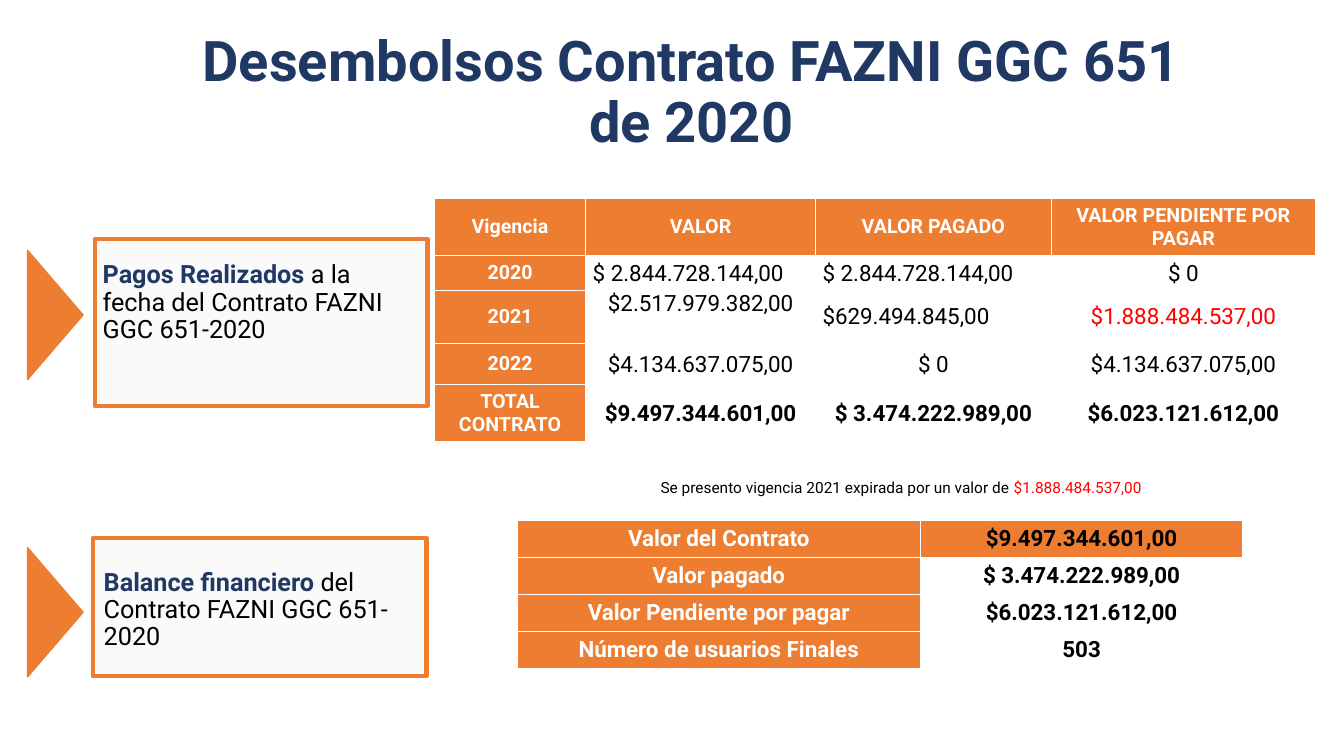
from lxml.etree import SubElement
from pptx import Presentation
from pptx.dml.color import RGBColor
from pptx.enum.shapes import MSO_SHAPE
from pptx.enum.text import MSO_ANCHOR, MSO_AUTO_SIZE, PP_ALIGN
from pptx.oxml import parse_xml
from pptx.oxml.ns import nsdecls, qn
from pptx.util import Inches, Pt

COLORS = {
    "navy": "203864",
    "orange": "ED7D31",
    "panel": "F2F2F2",
    "black": "000000",
    "white": "FFFFFF",
    "red": "FF0000",
}


def rgb(name):
    return RGBColor.from_string(COLORS[name])


class SlideBuilder:
    font_name = "Roboto"
    heading_margins = (0.1, 0.05, 0.1, 0.05)
    value_margins = (0.01, 0.01, 0.01, 0)

    def __init__(self, presentation):
        self.width = presentation.slide_width
        self.height = presentation.slide_height
        self.slide = presentation.slides.add_slide(presentation.slide_layouts[5])

    def across(self, percent):
        return round(self.width * percent / 100)

    def down(self, percent):
        return round(self.height * percent / 100)

    def area(self, left, top, width, height):
        return self.across(left), self.down(top), self.across(width), self.down(height)

    def style(self, font, size, color=None, bold=None):
        font.name = self.font_name
        font.size = Pt(size)
        if color:
            font.color.rgb = rgb(color)
        if bold is not None:
            font.bold = bold

    def set_margins(self, target, margins):
        sides = ("margin_left", "margin_top", "margin_right", "margin_bottom")
        for side, margin in zip(sides, margins):
            setattr(target, side, Inches(margin))

    def title(self, text, area):
        heading = self.slide.shapes.title
        heading.left, heading.top, heading.width, heading.height = self.area(*area)
        frame = heading.text_frame
        frame.text = text
        frame.word_wrap = True
        frame.auto_size = MSO_AUTO_SIZE.NONE
        frame.vertical_anchor = MSO_ANCHOR.BOTTOM
        paragraph = frame.paragraphs[0]
        paragraph.alignment = PP_ALIGN.CENTER
        paragraph.line_spacing = 0.9
        self.style(paragraph.font, 40, "navy", True)

    def shape(self, kind, area, fill, line_width, rotation=0, opacity=100):
        shape = self.slide.shapes.add_shape(kind, *self.area(*area))
        shape.shadow.inherit = False
        shape.rotation = rotation
        shape.fill.solid()
        shape.fill.fore_color.rgb = rgb(fill)
        shape.line.color.rgb = rgb("orange")
        shape.line.width = Pt(line_width)
        if opacity < 100:
            color = shape.fill._xPr.find(qn("a:solidFill"))[0]
            SubElement(color, qn("a:alpha")).set("val", str(opacity * 1000))

    def text(self, runs, area, size, margins, spacing=1.0, align=PP_ALIGN.LEFT):
        frame = self.slide.shapes.add_textbox(*self.area(*area)).text_frame
        frame.word_wrap = True
        self.set_margins(frame, margins)
        paragraph = frame.paragraphs[0]
        paragraph.alignment = align
        paragraph.line_spacing = spacing
        self.style(paragraph.font, size)
        for words, color, bold in runs:
            run = paragraph.add_run()
            run.text = words
            self.style(run.font, size, color, bold)

    def panel(self, lead, rest, panel_area, text_area, arrow_top):
        self.shape(MSO_SHAPE.RECTANGLE, panel_area, "panel", 3, opacity=38)
        self.text([(lead, "navy", True), (rest, "black", False)], text_area, 18,
                  (0.1, 0.04, 0.1, 0.05), spacing=0.9)
        self.shape(MSO_SHAPE.ISOSCELES_TRIANGLE, (-0.68, arrow_top, 9.6, 7.33),
                   "orange", 1, rotation=90)

    def borders(self, cell):
        properties = cell._tc.get_or_add_tcPr()
        for position, side in enumerate(("lnL", "lnR", "lnT", "lnB")):
            properties.insert(position, parse_xml(
                f'<a:{side} {nsdecls("a")} w="9525"><a:solidFill>'
                f'<a:srgbClr val="{COLORS["white"]}"/></a:solidFill></a:{side}>'))

    def cell(self, cell, words, size, color, bold, filled, margins):
        self.borders(cell)
        if filled:
            cell.fill.solid()
            cell.fill.fore_color.rgb = rgb("orange")
        else:
            cell.fill.background()
        self.set_margins(cell, margins)
        cell.vertical_anchor = MSO_ANCHOR.MIDDLE
        cell.text = words
        paragraph = cell.text_frame.paragraphs[0]
        paragraph.alignment = PP_ALIGN.CENTER
        self.style(paragraph.font, size, color, bold)

    def table(self, content, left, top, columns, rows, heading_size, is_heading, is_bold):
        area = self.area(left, top, sum(columns), sum(rows))
        table = self.slide.shapes.add_table(len(rows), len(columns), *area).table
        table.first_row = table.horz_banding = False
        for column, width in zip(table.columns, columns):
            column.width = self.across(width)
        for row, height in zip(table.rows, rows):
            row.height = self.down(height)
        for r, line in enumerate(content):
            for c, words in enumerate(line):
                if is_heading(r, c):
                    self.cell(table.cell(r, c), words, heading_size, "white", True,
                              True, self.heading_margins)
                else:
                    self.cell(table.cell(r, c), words, 16, "black", is_bold(r),
                              False, self.value_margins)
        return table


def main():
    presentation = Presentation()
    presentation.slide_width = Inches(13.33)
    presentation.slide_height = Inches(7.5)
    builder = SlideBuilder(presentation)

    builder.title("Desembolsos Contrato FAZNI GGC 651 de 2020", (14.18, 8.8, 74.49, 12.27))
    builder.panel("Pagos Realizados ", "a la fecha del Contrato FAZNI GGC 651-2020",
                  (7.05, 31.6, 24.76, 22.13), (6.9, 34.13, 24.76, 17.07), 38)
    builder.panel("Balance financiero ", "del Contrato FAZNI GGC 651-2020",
                  (6.9, 71.2, 24.83, 18.27), (6.98, 74.8, 24.61, 12.93), 77.33)

    payments = [
        ("Vigencia", "VALOR", "VALOR PAGADO", "VALOR PENDIENTE POR PAGAR"),
        ("2020", "$ 2.844.728.144,00", "$ 2.844.728.144,00", "$ 0"),
        ("2021", "$2.517.979.382,00", "$629.494.845,00", "$1.888.484.537,00"),
        ("2022", "$4.134.637.075,00", "$ 0", "$4.134.637.075,00"),
        ("TOTAL CONTRATO", "$9.497.344.601,00", "$ 3.474.222.989,00", "$6.023.121.612,00"),
    ]
    payments_table = builder.table(
        payments, 32.33, 26.27, (11.25, 17.1, 17.55, 19.65), (7.33, 4.53, 7.07, 5.47, 7.33),
        14, lambda r, c: r == 0 or c == 0, lambda r: r == len(payments) - 1)
    for r, c in ((1, 1), (1, 2), (2, 2)):
        left_value = payments_table.cell(r, c)
        left_value.margin_left = Inches(0.07)
        left_value.text_frame.paragraphs[0].alignment = PP_ALIGN.LEFT
    payments_table.cell(2, 1).vertical_anchor = MSO_ANCHOR.TOP
    expired_value = payments_table.cell(2, 3).text_frame.paragraphs[0]
    expired_value.font.color.rgb = rgb("red")

    balance = [
        ("Valor del Contrato", "$9.497.344.601,00"),
        ("Valor pagado", "$ 3.474.222.989,00"),
        ("Valor Pendiente por pagar", "$6.023.121.612,00"),
        ("Número de usuarios Finales", "503"),
    ]
    balance_table = builder.table(
        balance, 38.48, 68.8, (30, 24), (4.8,) * len(balance),
        16, lambda r, c: c == 0, lambda r: True)
    contract_value = balance_table.cell(0, 1)
    contract_value.fill.solid()
    contract_value.fill.fore_color.rgb = rgb("orange")

    builder.text([("Se presento vigencia 2021 expirada por un valor de ", "black", False),
                  ("$1.888.484.537,00", "red", False)],
                 (39.98, 62.53, 55.81, 6.27), 11, (0.1, 0.05, 0.32, 0.05),
                 align=PP_ALIGN.CENTER)
    presentation.save("out.pptx")


if __name__ == "__main__":
    main()
